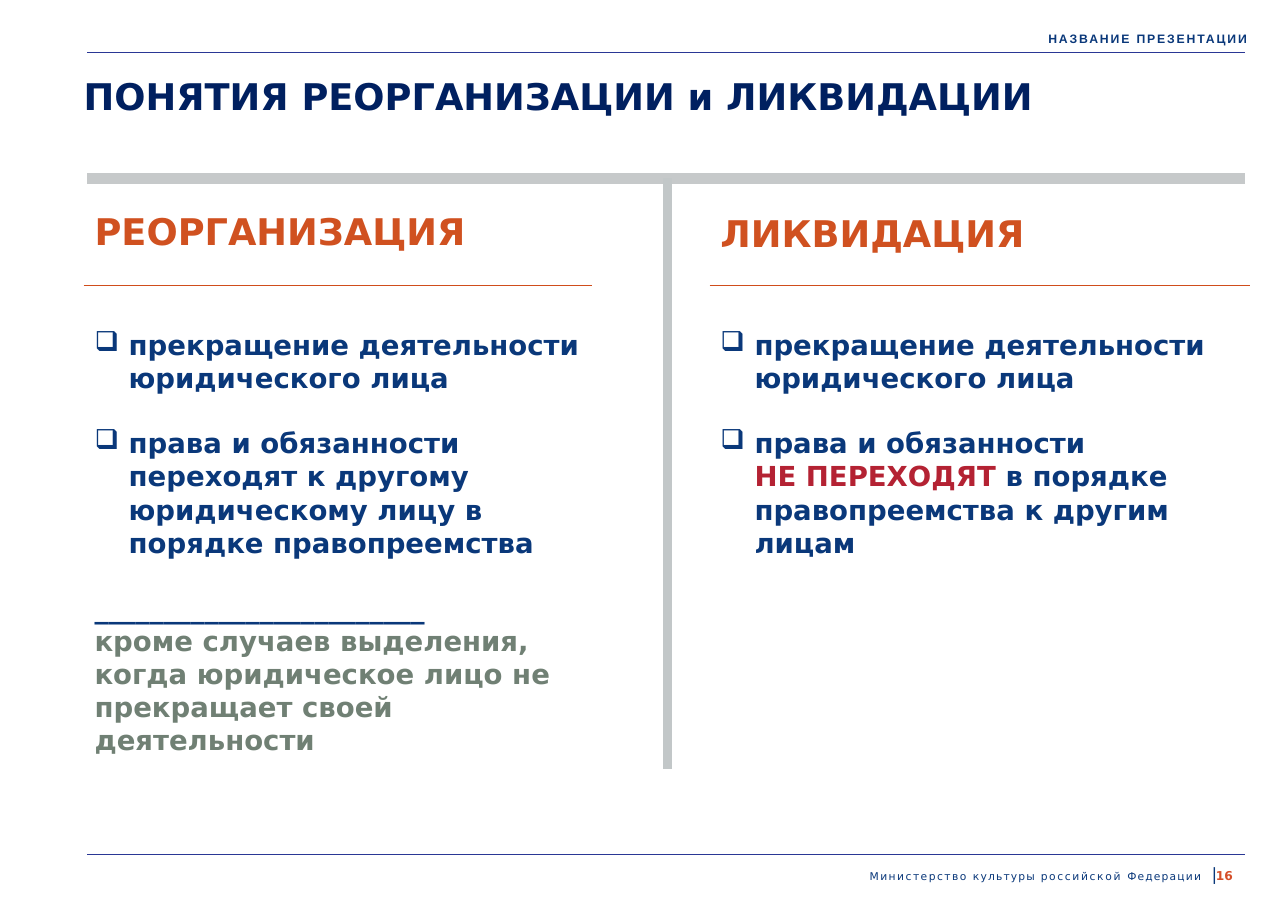
import pptx
import pptx.util
import pptx.dml.color
import pptx.enum.shapes
import pptx.enum.text
import pptx.oxml.ns
from lxml import etree

# Content: each line of text is a list of (words, format) runs
HEX = {"navy": "0A387A", "ink": "002060", "rust": "D05120", "page": "D54E28",
       "red": "B42233", "moss": "708074", "rule": "2A3795", "thin": "D04D1B",
       "band": "C6C9CA", "post": "C2C7C8"}
SANS = "DejaVu Sans"
BODY = {"size": 18, "name": SANS, "bold": True, "color": "navy"}
HEAD = BODY | {"size": 24, "color": "rust"}
FOOT = {"size": 7, "name": SANS, "color": "navy"}

TITLE = [("ПОНЯТИЯ РЕОРГАНИЗАЦИИ и ЛИКВИДАЦИИ", HEAD | {"color": "ink"})]
TOP = [("НАЗВАНИЕ ПРЕЗЕНТАЦИИ",
        {"size": 8, "name": "Arial", "bold": True, "color": "navy", "track": 1.2})]
OWNER = [("Министерство ", FOOT | {"track": 1}),
         ("культуры ", FOOT | {"track": 0.8}),
         ("российской ", FOOT | {"track": 1.1}),
         ("Федерации", FOOT | {"track": 0.8}),
         (" ", FOOT | {"track": 4}),
         ("|", FOOT | {"size": 11, "track": -0.1})]
PAGE = [("16", {"size": 8, "name": SANS, "bold": True, "color": "page"})]
END = [("прекращение деятельности юридического лица", BODY)]

LIST = {"bullet": True}
GAP = LIST | {"before": 21}
SIDES = [
    {"x": 6.5, "wide": 39.44, "y": 22.37, "tall": 48.97,
     "head": [("РЕОРГАНИЗАЦИЯ", HEAD)],
     "body": [(END, LIST),
              ([("права и обязанности переходят к другому юридическому лицу "
                 "в порядке правопреемства", BODY)], GAP),
              ([("_" * 24, BODY)], {"before": 21}),
              ([("кроме случаев выделения, когда юридическое лицо не "
                 "прекращает своей деятельности", BODY | {"color": "moss"})], {})]},
    {"x": 55.09, "wide": 41.66, "y": 22.49, "tall": 26.96,
     "head": [("ЛИКВИДАЦИЯ", HEAD)],
     "body": [(END, LIST),
              ([("права и обязанности ", BODY), ("\n", BODY),
                ("НЕ ПЕРЕХОДЯТ ", BODY | {"color": "red"}),
                ("в порядке правопреемства к другим лицам", BODY)], GAP)]},
]

# Lines: from x, y to x, y in percent of the slide, colour, width
LEFT, RIGHT, BAND = 6.76, 96.66, 19.59
LINES = [(LEFT, y, RIGHT, y, hue, wide) for y, hue, wide in
         ((93.83, "rule", 0.5), (5.8, "rule", 0.5), (BAND, "band", 7))]
LINES += [(6.5, 31.32, 45.94, 31.32, "thin", 0.75),
          (55.09, 31.32, 97.09, 31.32, "thin", 0.75),
          (51.84, BAND, 51.84, 84.4, "post", 6.25)]

Pt = pptx.util.Pt
ALIGN = pptx.enum.text.PP_ALIGN
deck = pptx.Presentation()
deck.slide_width = pptx.util.Inches(11.69)
deck.slide_height = pptx.util.Inches(8.27)
slide = deck.slides.add_slide(deck.slide_layouts[5])


def across(part):
    return round(deck.slide_width * part / 100)


def down(part):
    return round(deck.slide_height * part / 100)


def tint(color, name):
    color.rgb = pptx.dml.color.RGBColor.from_string(HEX[name])


def add_run(para, words, form):
    if words == "\n":
        para.add_line_break()
        return
    run = para.add_run()
    run.text = words
    for key, value in form.items():
        if key == "color":
            tint(run.font.color, value)
        elif key == "track":
            run.font._element.set("spc", str(round(value * 100)))
        else:
            setattr(run.font, key, Pt(value) if key == "size" else value)


def add_mark(para):
    prop = para._p.get_or_add_pPr()
    hang = pptx.util.Inches(0.31)
    prop.set("marL", str(hang))
    prop.set("indent", str(-hang))
    mark = etree.SubElement(prop, pptx.oxml.ns.qn("a:buChar"))
    mark.set("char", "❑")


def fill(frame, paras, pad=None):
    form = {"word_wrap": True, "vertical_anchor": pptx.enum.text.MSO_ANCHOR.TOP,
            "auto_size": pptx.enum.text.MSO_AUTO_SIZE.NONE}
    if pad is not None:
        form |= {"margin_" + side: pad for side in ("left", "top", "right", "bottom")}
    for key, value in form.items():
        setattr(frame, key, value)
    for i, (runs, look) in enumerate(paras):
        para = frame.add_paragraph() if i else frame.paragraphs[0]
        para.alignment = look.get("align", ALIGN.LEFT)
        para.space_before = Pt(look.get("before", 0))
        if "pitch" in look:
            para.line_spacing = Pt(look["pitch"])
        if "bullet" in look:
            add_mark(para)
        for words, font in runs:
            add_run(para, words, font)


def add_text(x, y, wide, tall, paras, pad=None):
    box = slide.shapes.add_textbox(across(x), down(y), across(wide), down(tall))
    fill(box.text_frame, paras, pad)


# Rules and the dividing frame
for x, y, x2, y2, hue, wide in LINES:
    line = slide.shapes.add_connector(pptx.enum.shapes.MSO_CONNECTOR.STRAIGHT,
                                      across(x), down(y), across(x2), down(y2))
    tint(line.line.color, hue)
    line.line.width = Pt(wide)
    etree.SubElement(line._element.spPr, pptx.oxml.ns.qn("a:effectLst"))

# Title
title = slide.shapes.title
spot = {"left": across(6.5), "top": down(8.1), "width": across(90.5), "height": down(4.84)}
for key, value in spot.items():
    setattr(title, key, value)
fill(title.text_frame, [(TITLE, {})], 0)

# Header and footer
add_text(64.16, 3.39, 32.68, 1.57, [(TOP, {"align": ALIGN.RIGHT})], 0)
add_text(67.15, 94.92, 27.37, 2.18, [(OWNER, {"align": ALIGN.RIGHT, "pitch": 12.3})], 0)
add_text(94.4, 95.41, 2.14, 1.57, [(PAGE, {"pitch": 9.2})], 0)

# Two columns
for side in SIDES:
    add_text(side["x"], side["y"], side["wide"], 6.05, [(side["head"], {})])
    add_text(side["x"], 35.43, side["wide"], side["tall"], side["body"])

deck.save("out.pptx")
